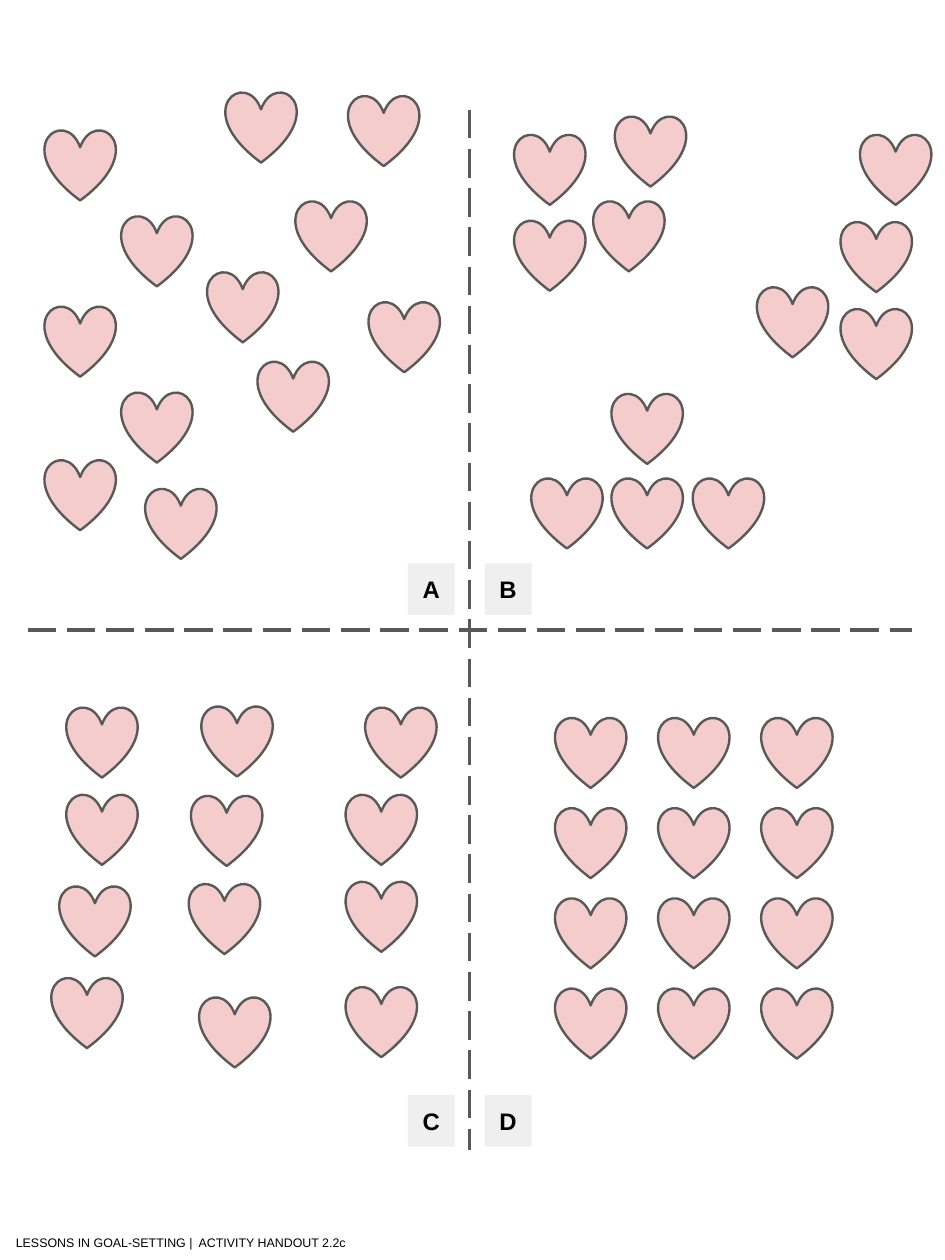
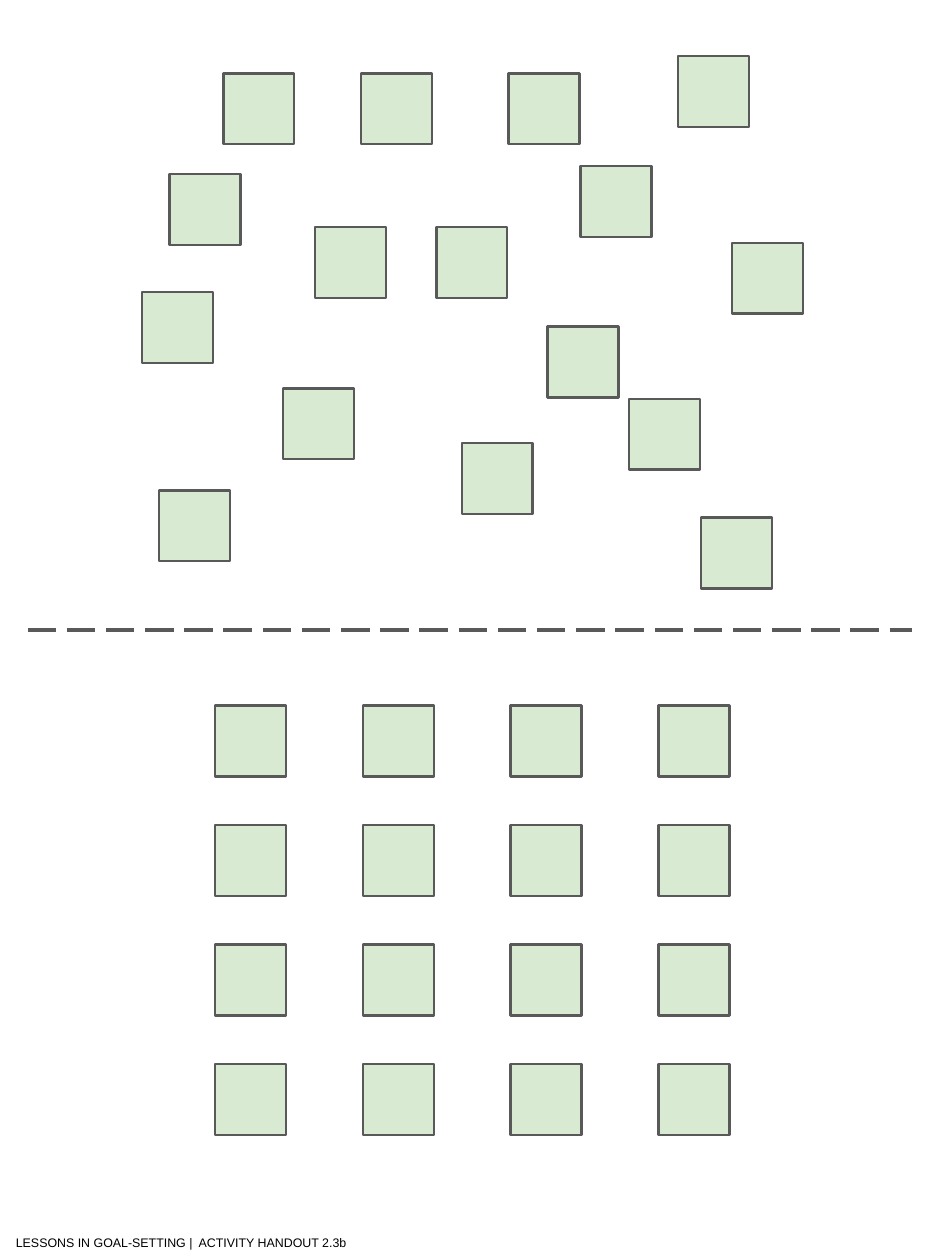
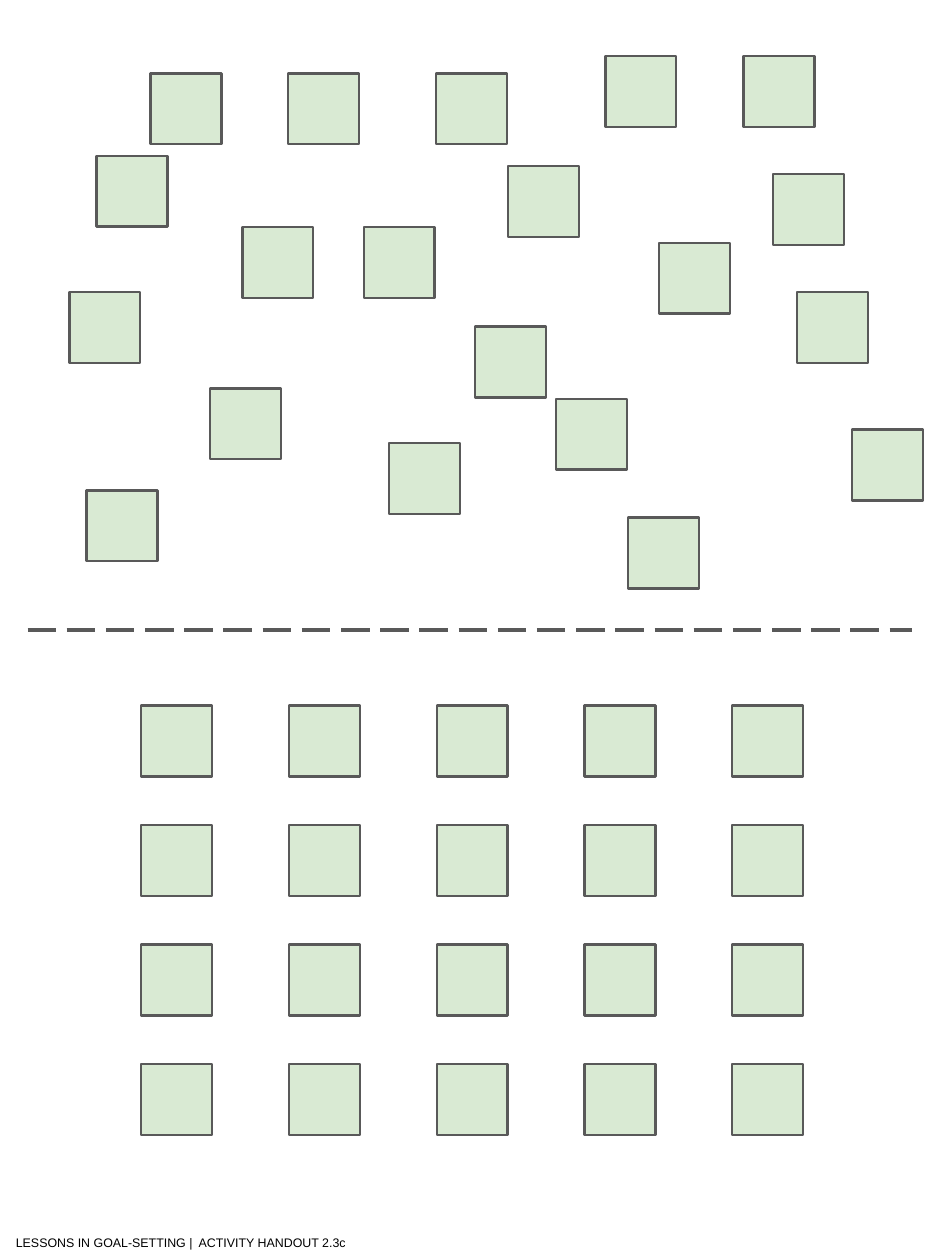
from typing import NamedTuple

from pptx import Presentation
from pptx.dml.color import RGBColor
from pptx.enum.dml import MSO_LINE
from pptx.enum.shapes import MSO_CONNECTOR as Link, MSO_SHAPE as Kind
from pptx.enum.text import MSO_ANCHOR as Anchor, MSO_AUTO_SIZE as Fit, PP_ALIGN as Align
from pptx.oxml.ns import qn
from pptx.util import Pt
from lxml import etree

# Shared look
FONT = "Arial"
BLACK, GRAY, PALE = "000000", "595959", "EFEFEF"
SIZE = 44.6
PAD = 7.2


class Spot(NamedTuple):
    x: float
    y: float


class Token(NamedTuple):
    kind: Kind
    fill: str


class Rule(NamedTuple):
    start: Spot
    end: Spot


class Label(NamedTuple):
    text: str
    x: float
    y: float


HEART = Token(Kind.HEART, "F4CCCC")
SQUARE = Token(Kind.RECTANGLE, "D9EAD3")
ACROSS = Rule(Spot(17.3, 396), Spot(573.1, 396))
DOWN = Rule(Spot(295.2, 69.1), Spot(295.2, 722.9))

LABELS = [
    Label(text, x, y)
    for text, x, y in zip("ABCD", [256.3, 304.6] * 2, [354.2] * 2 + [688.3] * 2)
]

# Hearts: scattered, clustered, loose rows
HEARTS_A = [
    Spot(76.3, 135.4), Spot(185.8, 126), Spot(76.3, 246.2), Spot(162, 226.8),
    Spot(28.1, 81.4), Spot(141.8, 57.6), Spot(28.1, 192.2), Spot(218.9, 59.8),
    Spot(130.3, 170.6), Spot(231.8, 189.4), Spot(28.1, 288.7), Spot(91.4, 306.7),
]
HEARTS_B = [
    Spot(323.3, 138.2), Spot(373, 126), Spot(435.6, 300.2), Spot(528.5, 193.7),
    Spot(384.5, 300.2), Spot(323.3, 84.2), Spot(384.5, 247), Spot(386.6, 72.7),
    Spot(528.5, 139), Spot(540.7, 84.2), Spot(334.1, 300.2), Spot(475.9, 180),
]
HEARTS_C = [
    Spot(41.8, 499), Spot(37.4, 556.6), Spot(125.3, 626.4), Spot(217.4, 553.7),
    Spot(126.7, 443.5), Spot(41.8, 444.2), Spot(120.2, 499.7), Spot(118.8, 555.1),
    Spot(217.4, 499), Spot(229.7, 444.2), Spot(32.4, 614.2), Spot(217.4, 619.9),
]

# Scattered squares that both square pages share, and those of one page
SHARED = [
    Spot(319.7, 46.1), Spot(140.4, 46.1), Spot(226.8, 46.1), Spot(89.3, 183.6),
    Spot(198, 142.6), Spot(100.1, 308.2), Spot(274.3, 142.6), Spot(177.8, 244.1),
    Spot(344.2, 205.2), Spot(365, 104.4), Spot(460.1, 152.6), Spot(426.2, 35.3),
    Spot(290.2, 278.6), Spot(440.6, 325.4), Spot(395.3, 250.6),
]
SHIFT = 45.7
EXTRA_B = [Spot(106.6, 109.4)]
EXTRA_C = [
    Spot(60.7, 97.9), Spot(467.3, 35.3), Spot(486, 109.4),
    Spot(501.1, 183.6), Spot(535.7, 270),
]


def tint(code: str) -> RGBColor:
    return RGBColor.from_string(code)


def grid(x: float, y: float, cols: int, rows: int, dx: float, dy: float) -> list[Spot]:
    return [Spot(x + c * dx, y + r * dy) for r in range(rows) for c in range(cols)]


def write(shape, text: str, *, size: float, bold: bool = False, align=Align.LEFT) -> None:
    frame = shape.text_frame
    frame.word_wrap = True
    frame.auto_size = Fit.SHAPE_TO_FIT_TEXT
    frame.vertical_anchor = Anchor.TOP
    frame.margin_left = frame.margin_right = Pt(PAD)
    frame.margin_top = frame.margin_bottom = Pt(PAD)
    para = frame.paragraphs[0]
    para.alignment = align
    run = para.add_run()
    run.text = text
    run.font.name, run.font.size, run.font.bold = FONT, Pt(size), bold
    run.font.color.rgb = tint(BLACK)


def block(slide, kind: Kind, x: float, y: float, w: float, h: float, fill: str):
    shape = slide.shapes.add_shape(kind, Pt(x), Pt(y), Pt(w), Pt(h))
    shape.shadow.inherit = False
    shape.fill.solid()
    shape.fill.fore_color.rgb = tint(fill)
    shape.line.fill.background()
    return shape


def place(slide, token: Token, spots: list[Spot]) -> None:
    for spot in spots:
        shape = block(slide, token.kind, spot.x, spot.y, SIZE, SIZE, token.fill)
        shape.line.color.rgb = tint(GRAY)
        shape.line.width = Pt(1.5)


def divide(slide, rule: Rule) -> None:
    ends = [Pt(n) for n in (*rule.start, *rule.end)]
    line = slide.shapes.add_connector(Link.STRAIGHT, *ends)
    line.line.color.rgb = tint(GRAY)
    line.line.width = Pt(2.25)
    line.line.dash_style = MSO_LINE.LONG_DASH
    etree.SubElement(line._element.spPr, qn("a:effectLst"))


def mark(slide, label: Label) -> None:
    box = block(slide, Kind.RECTANGLE, label.x, label.y, 29.5, 32.4, PALE)
    write(box, label.text, size=15, bold=True, align=Align.CENTER)


def page(deck, code: str):
    """Add a slide with the divider and footer that all pages share."""
    slide = deck.slides.add_slide(deck.slide_layouts[6])
    divide(slide, ACROSS)
    foot = slide.shapes.add_textbox(Pt(2.9), Pt(771.8), Pt(241.9), Pt(23.8))
    write(foot, f"LESSONS IN GOAL-SETTING |  ACTIVITY HANDOUT {code}", size=7.8)
    return slide


def hearts(deck) -> None:
    slide = page(deck, "2.2c")
    divide(slide, DOWN)
    for label in LABELS:
        mark(slide, label)
    rows = grid(349, 450.7, 3, 4, 64.8, 56.7)
    for group in (HEARTS_A, HEARTS_B, HEARTS_C, rows):
        place(slide, HEART, group)


def squares(deck, code: str, loose: list[Spot], left: float, cols: int) -> None:
    slide = page(deck, code)
    place(slide, SQUARE, loose)
    place(slide, SQUARE, grid(left, 443.5, cols, 4, 92.9, 75.1))


def main() -> None:
    deck = Presentation()
    deck.slide_width, deck.slide_height = Pt(594), Pt(792)
    hearts(deck)
    squares(deck, "2.3b", EXTRA_B + SHARED, 135.2, 4)
    moved = [Spot(s.x - SHIFT, s.y) for s in SHARED]
    squares(deck, "2.3c", EXTRA_C + moved, 88.7, 5)
    deck.save("out.pptx")


if __name__ == "__main__":
    main()
